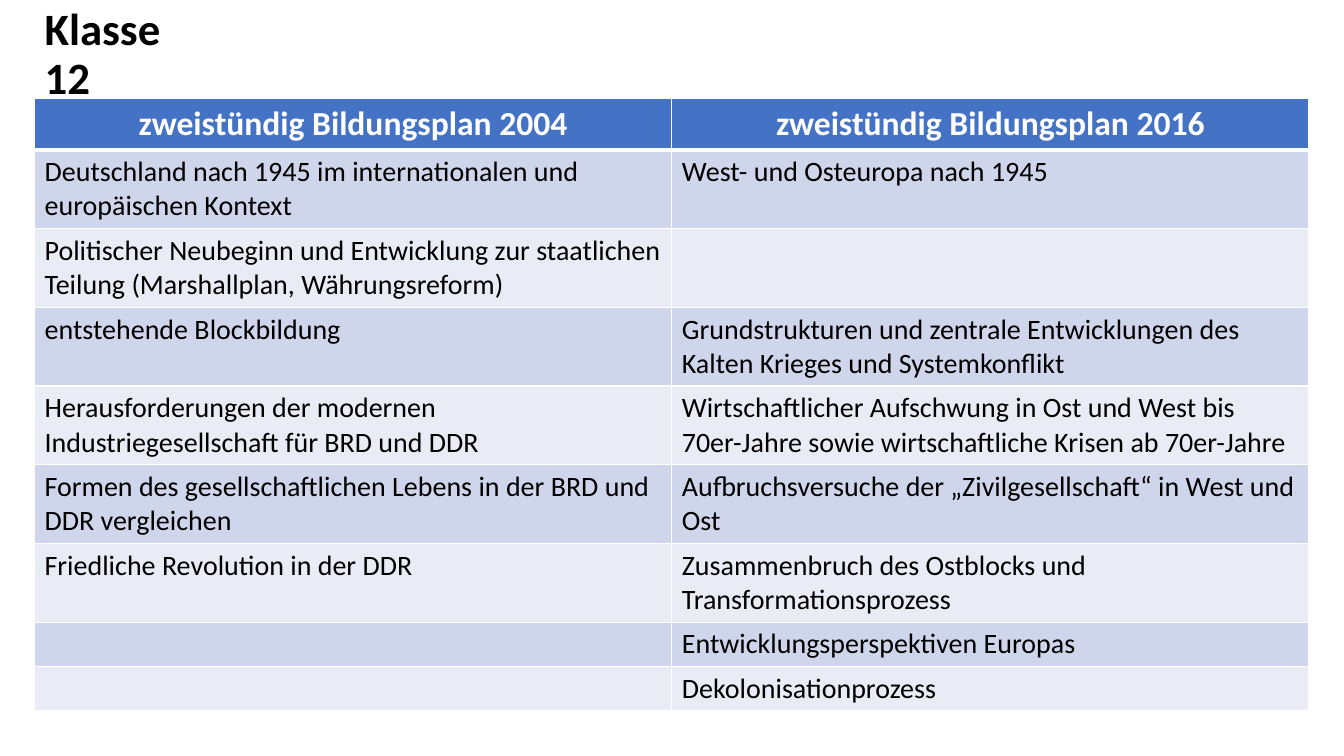
from dataclasses import dataclass

from lxml import etree
from pptx import Presentation
from pptx.dml.color import RGBColor
from pptx.enum.text import MSO_ANCHOR, MSO_AUTO_SIZE, PP_ALIGN
from pptx.oxml.ns import qn
from pptx.util import Cm, Pt

MIDDLE = MSO_ANCHOR.MIDDLE
NO_AUTOFIT = MSO_AUTO_SIZE.NONE
LEFT = PP_ALIGN.LEFT
CENTER = PP_ALIGN.CENTER
TITLE_ONLY = 5


@dataclass(frozen=True)
class Theme:
    font: str = "Calibri"
    dark: str = "000000"
    light: str = "FFFFFF"
    header: str = "4472C4"
    bands: tuple = ("CFD5EA", "E9EBF5")
    title_size: int = 32
    header_size: int = 24
    body_size: int = 20
    thin: int = 1
    thick: int = 3


class PageBuilder:
    def __init__(self, deck, theme):
        self.theme = theme
        self.page = deck.slides.add_slide(deck.slide_layouts[TITLE_ONLY])

    def set_text(self, para, text, size, color, bold=False, align=LEFT):
        para.text = text
        para.alignment = align
        for span in para.runs:
            span.font.name = self.theme.font
            span.font.size = Pt(size)
            span.font.bold = bold
            span.font.color.rgb = RGBColor.from_string(color)

    def title(self, text, left, top, width, height):
        box = self.page.shapes.title
        box.left, box.top, box.width, box.height = left, top, width, height
        frame = box.text_frame
        frame.word_wrap = True
        frame.auto_size = NO_AUTOFIT
        frame.vertical_anchor = MIDDLE
        para = frame.paragraphs[0]
        self.set_text(para, text, self.theme.title_size, self.theme.dark, bold=True)
        para.line_spacing = 0.9

    def borders(self, cell, top, bottom):
        properties = cell._tc.get_or_add_tcPr()
        sides = {"lnL": self.theme.thin, "lnR": self.theme.thin, "lnT": top, "lnB": bottom}
        for position, (side, points) in enumerate(sides.items()):
            line = etree.Element(qn(f"a:{side}"), w=str(Pt(points)))
            fill = etree.SubElement(line, qn("a:solidFill"))
            etree.SubElement(fill, qn("a:srgbClr"), val=self.theme.light)
            properties.insert(position, line)

    def table(self, rows, heights, left, top, width):
        theme = self.theme
        table = self.page.shapes.add_table(
            len(rows), len(rows[0]), left, top, width, sum(heights)
        ).table
        table.horz_banding = False
        for index, (texts, height) in enumerate(zip(rows, heights)):
            table.rows[index].height = height
            heading = index == 0
            color = theme.header if heading else theme.bands[(index - 1) % 2]
            for column, text in enumerate(texts):
                cell = table.cell(index, column)
                cell.fill.solid()
                cell.fill.fore_color.rgb = RGBColor.from_string(color)
                self.borders(
                    cell,
                    theme.thick if index == 1 else theme.thin,
                    theme.thick if heading else theme.thin,
                )
                para = cell.text_frame.paragraphs[0]
                if heading:
                    self.set_text(para, text, theme.header_size, theme.light, True, CENTER)
                elif text:
                    self.set_text(para, text, theme.body_size, theme.dark)


CURRICULUM = [
    ("zweistündig Bildungsplan 2004", "zweistündig Bildungsplan 2016"),
    ("Deutschland nach 1945 im internationalen und europäischen Kontext",
     "West- und Osteuropa nach 1945"),
    ("Politischer Neubeginn und Entwicklung zur staatlichen Teilung "
     "(Marshallplan, Währungsreform)", ""),
    ("entstehende Blockbildung",
     "Grundstrukturen und zentrale Entwicklungen des Kalten Krieges und Systemkonflikt"),
    ("Herausforderungen der modernen Industriegesellschaft für BRD und DDR",
     "Wirtschaftlicher Aufschwung in Ost und West bis 70er-Jahre "
     "sowie wirtschaftliche Krisen ab 70er-Jahre"),
    ("Formen des gesellschaftlichen Lebens in der BRD und DDR vergleichen",
     "Aufbruchsversuche der „Zivilgesellschaft“ in West und Ost"),
    ("Friedliche Revolution in der DDR",
     "Zusammenbruch des Ostblocks und Transformationsprozess"),
    ("", "Entwicklungsperspektiven Europas"),
    ("", "Dekolonisationprozess"),
]


def main():
    deck = Presentation()
    deck.slide_width, deck.slide_height = Cm(33.87), Cm(19.05)
    builder = PageBuilder(deck, Theme())
    heights = [Cm(1.28)] + [Cm(1.98)] * 6 + [Cm(1.12)] * 2
    builder.table(CURRICULUM, heights, Cm(0.87), Cm(2.49), Cm(32.12))
    builder.title("Klasse 12", Cm(0.87), Cm(0.56), Cm(4.78), Cm(1.68))
    deck.save("out.pptx")


if __name__ == "__main__":
    main()
